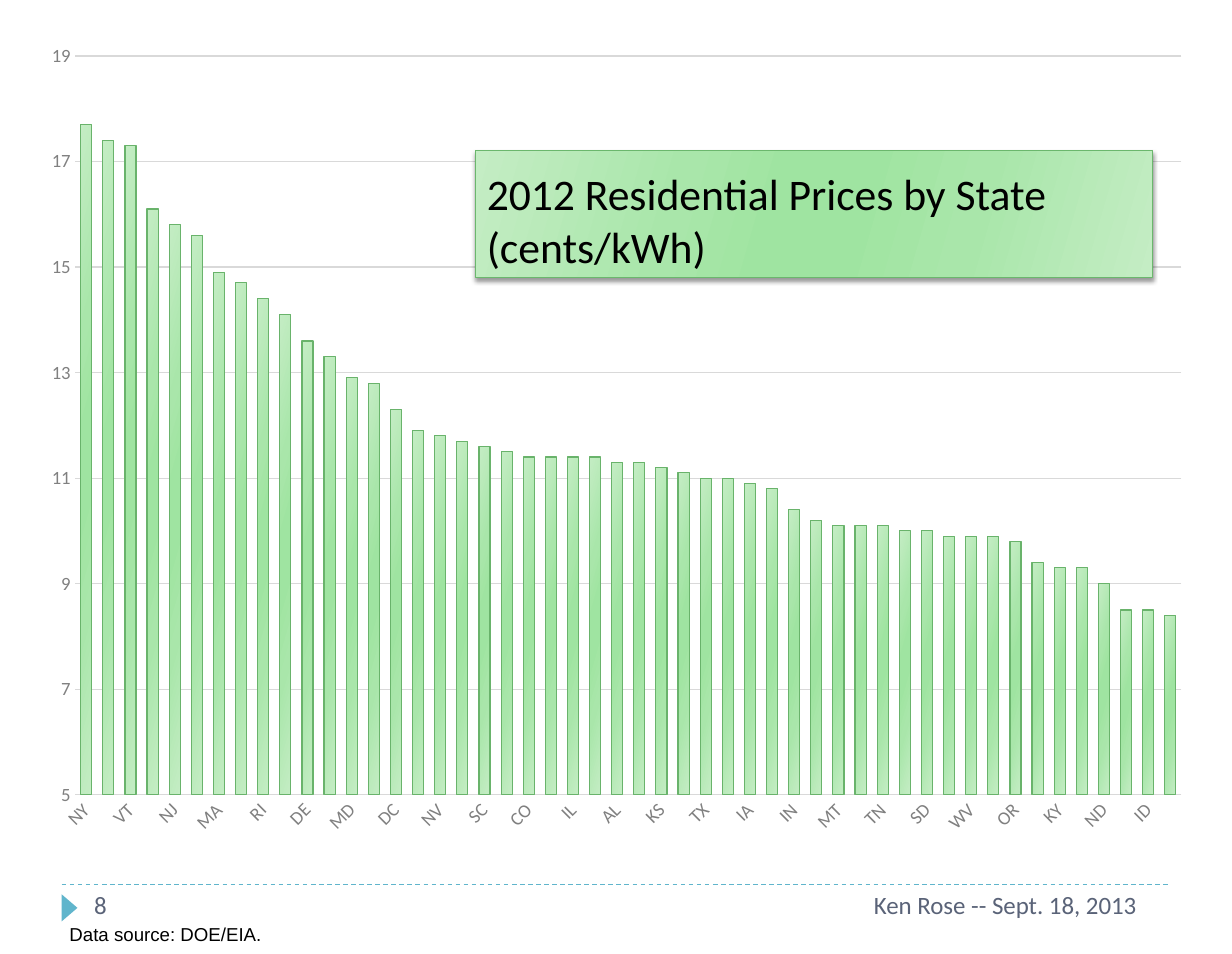
from dataclasses import dataclass

from lxml import etree
from pptx import Presentation
from pptx.chart.data import CategoryChartData
from pptx.dml.color import RGBColor
from pptx.enum.chart import XL_CHART_TYPE, XL_TICK_MARK
from pptx.enum.dml import MSO_LINE
from pptx.enum.shapes import MSO_CONNECTOR, MSO_SHAPE
from pptx.enum.text import MSO_ANCHOR
from pptx.oxml import parse_xml
from pptx.oxml.ns import nsdecls, qn
from pptx.util import Pt

COLUMN = XL_CHART_TYPE.COLUMN_CLUSTERED
NO_TICK = XL_TICK_MARK.NONE
DASH = MSO_LINE.DASH
STRAIGHT = MSO_CONNECTOR.STRAIGHT
RECT, TRIANGLE = MSO_SHAPE.RECTANGLE, MSO_SHAPE.ISOSCELES_TRIANGLE
TOP, BOTTOM = MSO_ANCHOR.TOP, MSO_ANCHOR.BOTTOM

BLACK, SLATE, TEAL, GRAY, PALE = "000000", "5A6378", "60B5CC", "808080", "D9D9D9"
STOPS = [(0, "C4EDC4"), (30, "A9E6AA"), (45, "9FE4A1"),
         (55, "9FE4A1"), (73, "A9E6AA"), (100, "C4EDC4")]

STATES = ("NY CT VT NH NJ CA MA ME RI MI DE WI MD PA DC US NV OH SC FL CO NM IL MN AL "
          "AZ KS VA TX GA IA NC IN MS MT MO TN NE SD UT WV WY OR OK KY AR ND WA ID LA").split()
PRICES = [17.7, 17.4, 17.3, 16.1, 15.8, 15.6, 14.9, 14.7, 14.4, 14.1,
          13.6, 13.3, 12.9, 12.8, 12.3, 11.9, 11.8, 11.7, 11.6, 11.5,
          11.4, 11.4, 11.4, 11.4, 11.3, 11.3, 11.2, 11.1, 11, 11,
          10.9, 10.8, 10.4, 10.2, 10.1, 10.1, 10.1, 10, 10, 9.9,
          9.9, 9.9, 9.8, 9.4, 9.3, 9.3, 9, 8.5, 8.5, 8.4]


@dataclass
class Box:
    left: float
    top: float
    width: float
    height: float

    def place(self) -> list:
        return [Pt(v) for v in (self.left, self.top, self.width, self.height)]


@dataclass
class Label:
    text: str
    box: Box
    size: float
    tint: str = SLATE
    face: str = "Calibri"
    pad: tuple = (7.2, 3.6)
    anchor: int = TOP


def color(code: str) -> RGBColor:
    return RGBColor.from_string(code)


def assign(item, values: dict) -> None:
    for name, value in values.items():
        setattr(item, name, value)


def style_font(font, face: str, size: float, tint: str) -> None:
    assign(font, {"name": face, "size": Pt(size)})
    font.color.rgb = color(tint)


def style_line(line, tint: str) -> None:
    line.color.rgb = color(tint)
    line.width = Pt(0.75)


def shade(fill, props) -> None:
    """Fill with the slanted green gradient."""
    fill.background()
    stops = "".join(f'<a:gs pos="{spot * 1000}"><a:srgbClr val="{code}"/></a:gs>'
                    for spot, code in STOPS)
    blend = parse_xml(f'<a:gradFill {nsdecls("a")} rotWithShape="1"><a:gsLst>{stops}</a:gsLst>'
                      '<a:lin ang="960000" scaled="1"/></a:gradFill>')
    props.replace(props.find(qn("a:noFill")), blend)


def write(shape, label: Label) -> None:
    frame = shape.text_frame
    side, edge = (Pt(v) for v in label.pad)
    assign(frame, {"word_wrap": True, "vertical_anchor": label.anchor,
                   "margin_left": side, "margin_right": side,
                   "margin_top": edge, "margin_bottom": edge})
    para = frame.paragraphs[0]
    para.alignment = 1
    run = para.add_run()
    run.text = label.text
    style_font(run.font, label.face, label.size, label.tint)


def add_prices(slide, box: Box) -> None:
    data = CategoryChartData(number_format="General")
    data.categories = STATES
    data.add_series("Series 1", PRICES)
    chart = slide.shapes.add_chart(COLUMN, *box.place(), data).chart
    assign(chart, {"has_legend": False, "has_title": False})
    style_font(chart.font, "Calibri", 10, BLACK)

    # Bars
    plot = chart.plots[0]
    assign(plot, {"gap_width": 100, "overlap": -24, "vary_by_categories": False})
    bars = plot.series[0]
    bars.invert_if_negative = False
    style_line(bars.format.line, "69B36B")
    shade(bars.format.fill, bars._element.spPr)

    # Axes
    states, cents = chart.category_axis, chart.value_axis
    for axis in (states, cents):
        assign(axis, {"major_tick_mark": NO_TICK, "minor_tick_mark": NO_TICK})
        style_font(axis.tick_labels.font, "Calibri", 12, GRAY)
    assign(cents, {"minimum_scale": 5, "maximum_scale": 19, "major_unit": 2,
                   "has_major_gridlines": True})
    cents.format.line.fill.background()
    style_line(cents.major_gridlines.format.line, PALE)
    style_line(states.format.line, PALE)

    # Slanted state names, every second one
    node = states._element
    node.find(qn("c:txPr")).find(qn("a:bodyPr")).set("rot", "-2700000")
    skip = parse_xml(f'<c:tickLblSkip {nsdecls("c")} val="2"/>')
    node.find(qn("c:noMultiLvlLbl")).addprevious(skip)

    # Plot area
    area = node.getparent()
    for old in area.findall(qn("c:layout")):
        area.remove(old)
    parts = {"layoutTarget": "inner", "xMode": "edge", "yMode": "edge",
             "x": 0.04, "y": 0.034, "w": 0.94, "h": 0.898}
    inner = "".join(f'<c:{tag} val="{val}"/>' for tag, val in parts.items())
    area.insert(0, parse_xml(f'<c:layout {nsdecls("c")}><c:manualLayout>{inner}'
                             '</c:manualLayout></c:layout>'))


def add_title(slide, label: Label) -> None:
    panel = slide.shapes.add_shape(RECT, *label.box.place())
    props = panel._element.spPr
    shade(panel.fill, props)
    style_line(panel.line, "6BB76D")
    props.append(parse_xml(
        f'<a:effectLst {nsdecls("a")}><a:outerShdw blurRad="{Pt(3)}" dist="{Pt(2)}" '
        'dir="5400000" rotWithShape="0"><a:srgbClr val="000000"><a:alpha val="40000"/>'
        '</a:srgbClr></a:outerShdw></a:effectLst>'))
    write(panel, label)


def add_footer(slide, labels: list[Label]) -> None:
    rule = slide.shapes.add_connector(STRAIGHT, Pt(39.6), Pt(567.4), Pt(751), Pt(567.4))
    style_line(rule.line, TEAL)
    rule.line.dash_style = DASH
    etree.SubElement(rule._element.spPr, qn("a:effectLst"))

    mark = slide.shapes.add_shape(TRIANGLE, *Box(36, 577.4, 17.3, 10.1).place())
    mark.rotation = 90
    mark.shadow.inherit = False
    mark.fill.solid()
    mark.fill.fore_color.rgb = color(TEAL)
    mark.line.fill.background()

    for label in labels:
        write(slide.shapes.add_textbox(*label.box.place()), label)


def main() -> None:
    deck = Presentation()
    assign(deck, {"slide_width": Pt(790.56), "slide_height": Pt(612)})
    slide = deck.slides.add_slide(deck.slide_layouts[6])
    add_prices(slide, Box(18, 18, 755.3, 527.8))
    add_footer(slide, [
        Label("Ken Rose -- Sept. 18, 2013", Box(553.7, 567.4, 198, 32.4), 16),
        Label("8", Box(53.3, 567.4, 171.4, 32.4), 16),
        Label("Data source: DOE/EIA.", Box(44.6, 591.8, 440.6, 14.4), 12, BLACK, "Arial", (0, 0)),
    ])
    add_title(slide, Label("2012 Residential Prices by State (cents/kWh)",
                           Box(305.3, 96.5, 434.2, 81.4), 28, BLACK, anchor=BOTTOM))
    deck.save("out.pptx")


if __name__ == "__main__":
    main()
